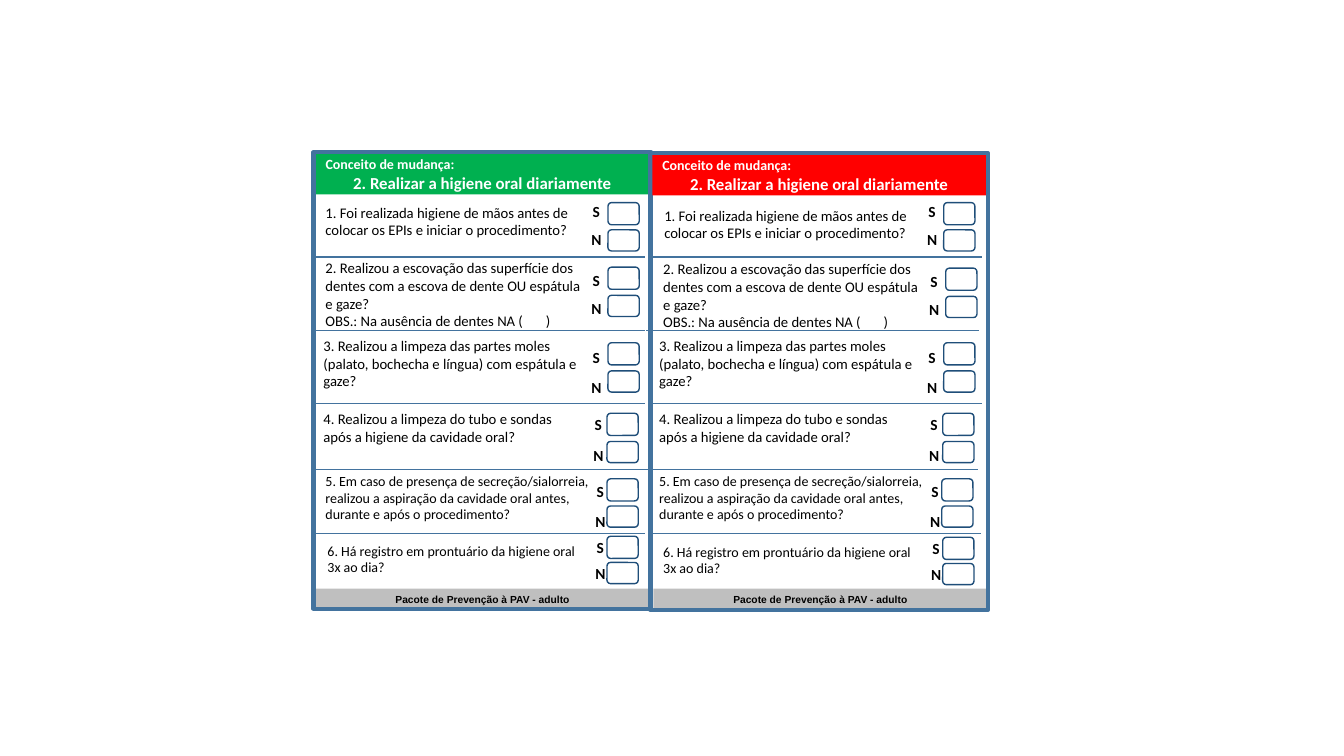
from dataclasses import dataclass

from lxml.etree import SubElement
from pptx import Presentation
from pptx.dml.color import RGBColor
from pptx.enum.shapes import MSO_CONNECTOR, MSO_SHAPE
from pptx.enum.text import MSO_ANCHOR, PP_ALIGN
from pptx.oxml.ns import qn
from pptx.util import Inches, Pt

FRAME_BLUE = "43739E"
BOX_BLUE = "1F4E79"
BLACK = "000000"
WHITE = "FFFFFF"
GREY = "BFBFBF"
HEADER = [("Conceito de mudança:", 10, PP_ALIGN.LEFT),
          ("2. Realizar a higiene oral diariamente", 12, PP_ALIGN.CENTER)]
FOOTER = "Pacote de Prevenção à PAV - adulto"


@dataclass
class Question:
    """One checklist question, placed on the left card, with its shifts to the right card."""
    lines: list
    size: float
    area: tuple
    box_left: float
    box_tops: tuple
    label_left: float
    label_tops: tuple
    text_shift: tuple
    answer_shift: tuple


QUESTIONS = [
    Question(["1. Foi realizada higiene de mãos antes de colocar os EPIs e iniciar o procedimento?"],
             10.5, (3.13, 1.95, 2.73, 0.49), 6.03, (2.01, 2.28), 5.8, (2.02, 2.3),
             (3.36, 0.03), (3.33, 0)),
    Question(["2. Realizou a escovação das superfície dos dentes com a escova de dente OU espátula e gaze?",
              "OBS.: Na ausência de dentes NA (       )"],
             10.5, (3.13, 2.58, 2.73, 0.68), 6.03, (2.65, 2.93), 5.8, (2.7, 2.99),
             (3.35, 0.01), (3.35, 0.01)),
    Question(["3. Realizou a limpeza das partes moles (palato, bochecha e língua) com espátula e gaze?"],
             10.5, (3.11, 3.36, 2.73, 0.49), 6.03, (3.4, 3.68), 5.8, (3.47, 3.77),
             (3.33, 0), (3.33, 0)),
    Question(["4. Realizou a limpeza do tubo e sondas após a higiene da cavidade oral?"],
             10.5, (3.11, 4, 2.73, 0.49), 6.02, (4.1, 4.38), 5.82, (4.13, 4.45),
             (3.33, 0), (3.33, 0)),
    Question(["5. Em caso de presença de secreção/sialorreia, realizou a aspiração da cavidade oral "
              "antes, durante e após o procedimento?"],
             10, (3.13, 4.69, 2.84, 0.49), 6.02, (4.75, 5.02), 5.84, (4.79, 5.1),
             (3.31, 0), (3.32, 0)),
    Question(["6. Há registro em prontuário da higiene oral 3x ao dia?"],
             10, (3.15, 5.3, 2.73, 0.49), 6.02, (5.32, 5.58), 5.84, (5.35, 5.62),
             (3.33, 0.01), (3.33, 0.01)),
]
RULES = [(2.55, 3.34), (3.28, 3.31), (4, 3.34), (4.66, 3.3), (5.29, 3.33)]


def color(value):
    """Turn a hex string into a colour."""
    return RGBColor.from_string(value)


def shifted(area, shift, side):
    """Move an area by its shift when side is 1, and leave it when side is 0."""
    left, top, width, height = area
    return left + shift[0] * side, top + shift[1] * side, width, height


def write(shape, lines, hue=BLACK, bold=False, font="Calibri", inset=(0.1, 0.05)):
    """Write (text, size, alignment) lines into a shape, anchored in the middle."""
    frame = shape.text_frame
    frame.word_wrap = True
    frame.vertical_anchor = MSO_ANCHOR.MIDDLE
    frame.margin_left = frame.margin_right = Inches(inset[0])
    frame.margin_top = frame.margin_bottom = Inches(inset[1])
    for index, (text, size, align) in enumerate(lines):
        para = frame.add_paragraph() if index else frame.paragraphs[0]
        para.alignment = align
        span = para.add_run()
        span.text = text
        span.font.name = font
        span.font.size = Pt(size)
        span.font.bold = bold
        span.font.color.rgb = color(hue)


def add_box(shapes, kind, area, fill=None, line=None, weight=1):
    """Add a preset shape with an optional fill and outline."""
    box = shapes.add_shape(kind, *map(Inches, area))
    box.shadow.inherit = False
    if fill:
        box.fill.solid()
        box.fill.fore_color.rgb = color(fill)
    else:
        box.fill.background()
    if line:
        box.line.color.rgb = color(line)
        box.line.width = Pt(weight)
    else:
        box.line.fill.background()
    return box


def add_label(shapes, area, lines, **style):
    """Add a text box."""
    write(shapes.add_textbox(*map(Inches, area)), lines, **style)


def add_rule(shapes, left, top):
    """Add a thin line between two questions."""
    rule = shapes.add_connector(MSO_CONNECTOR.STRAIGHT, Inches(left), Inches(top),
                                Inches(left + 3.3), Inches(top))
    rule.line.color.rgb = color(FRAME_BLUE)
    rule.line.width = Pt(1)
    SubElement(rule._element.spPr, qn("a:effectLst"))


def add_question(page, question, side):
    """Add a question with its yes and no boxes as one group."""
    shapes = page.shapes.add_group_shape().shapes
    add_label(shapes, shifted(question.area, question.text_shift, side),
              [(line, question.size, PP_ALIGN.LEFT) for line in question.lines])
    answers = zip("SN", question.box_tops, question.label_tops, (0.22, 0.21), (0.16, 0.14))
    for letter, box_top, label_top, box_height, label_height in answers:
        box_area = (question.box_left, box_top, 0.31, box_height)
        label_area = (question.label_left, label_top, 0.23, label_height)
        add_box(shapes, MSO_SHAPE.ROUNDED_RECTANGLE,
                shifted(box_area, question.answer_shift, side), line=BOX_BLUE)
        add_label(shapes, shifted(label_area, question.answer_shift, side),
                  [(letter, 11, PP_ALIGN.CENTER)], bold=True, inset=(0, 0))


def add_card(page, side, header_fill):
    """Add a whole checklist card: 0 is the left side, 1 the right."""
    shapes = page.shapes
    footer = add_box(shapes, MSO_SHAPE.RECTANGLE,
                     shifted((3.13, 5.84, 3.31, 0.22), (3.35, 0), side), fill=GREY)
    write(footer, [(FOOTER, 7.3, PP_ALIGN.CENTER)], bold=True, font="Arial", inset=(0.1, 0))
    header = add_box(shapes, MSO_SHAPE.RECTANGLE,
                     shifted((3.13, 1.52, 3.31, 0.41), (3.34, 0.01), side), fill=header_fill)
    write(header, HEADER, hue=WHITE, bold=True)
    add_box(shapes, MSO_SHAPE.RECTANGLE,
            shifted((3.11, 1.51, 3.35, 4.53), (3.34, 0.01), side), line=FRAME_BLUE, weight=3)
    for top, shift in RULES:
        add_rule(shapes, 3.1 + shift * side, top)
    for question in QUESTIONS:
        add_question(page, question, side)


def main():
    """Build the slide with its green and red cards."""
    deck = Presentation()
    deck.slide_width = Inches(13.33)
    deck.slide_height = Inches(7.5)
    page = deck.slides.add_slide(deck.slide_layouts[6])
    for side, header_fill in enumerate(("00B050", "FF0000")):
        add_card(page, side, header_fill)
    deck.save("out.pptx")


if __name__ == "__main__":
    main()
